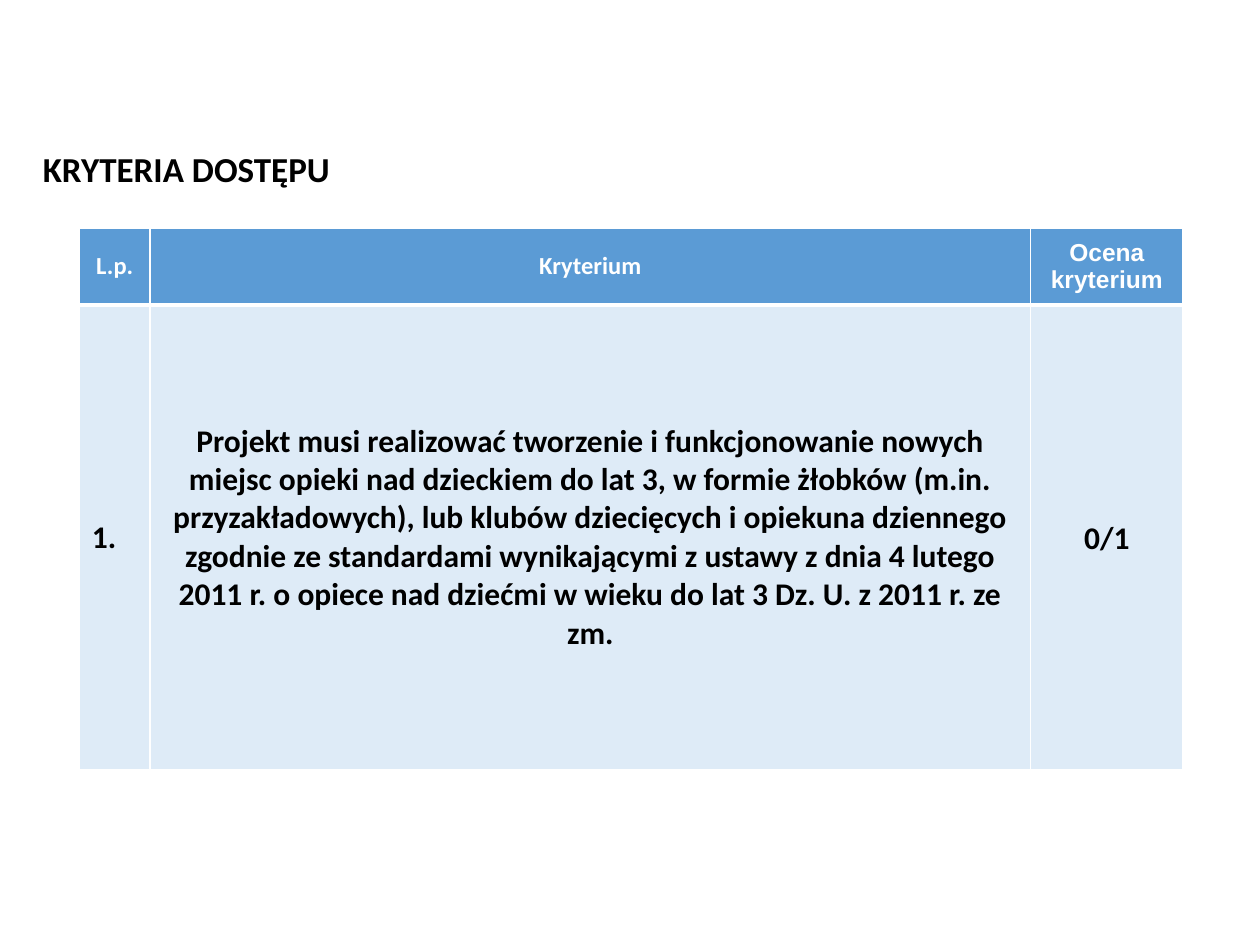
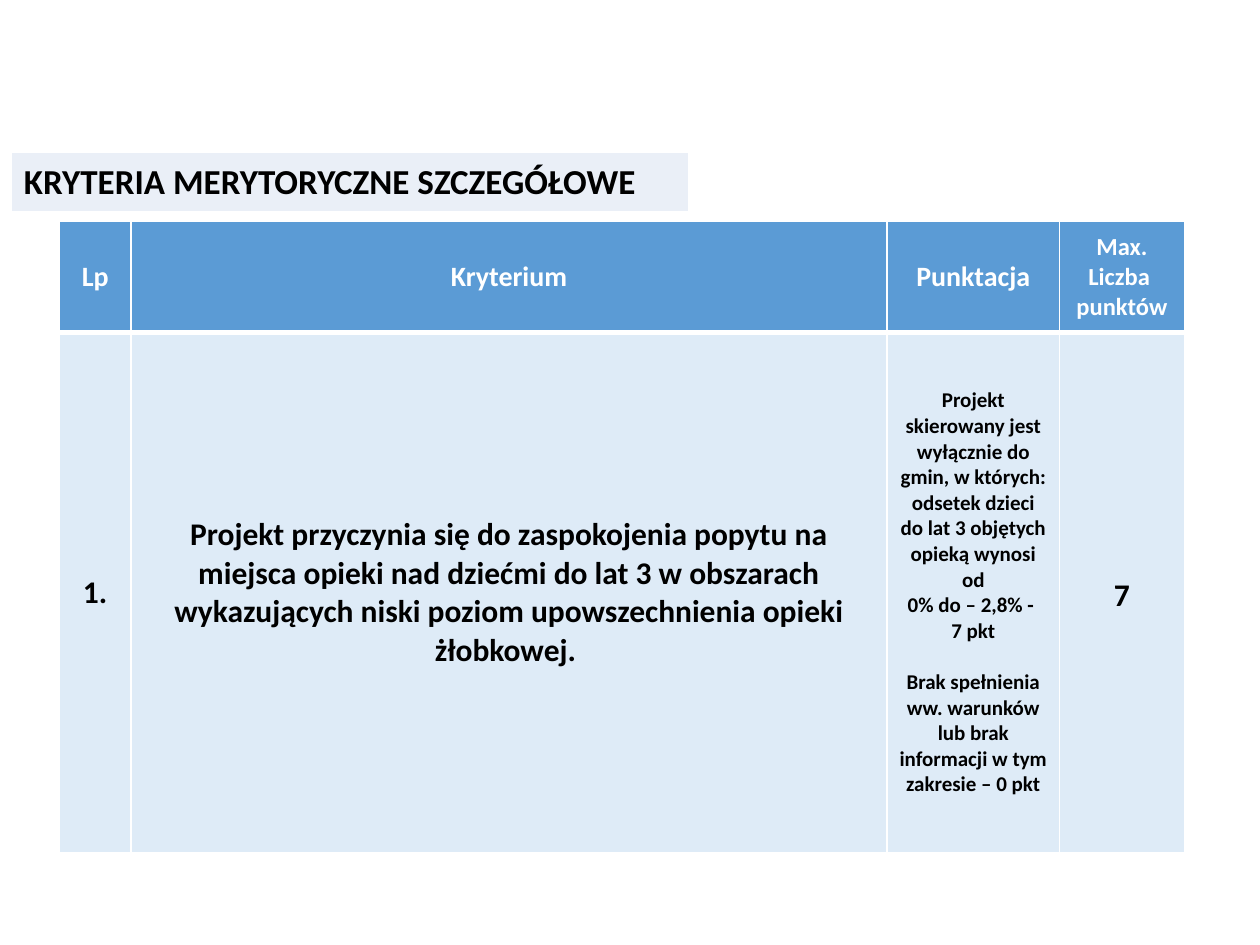
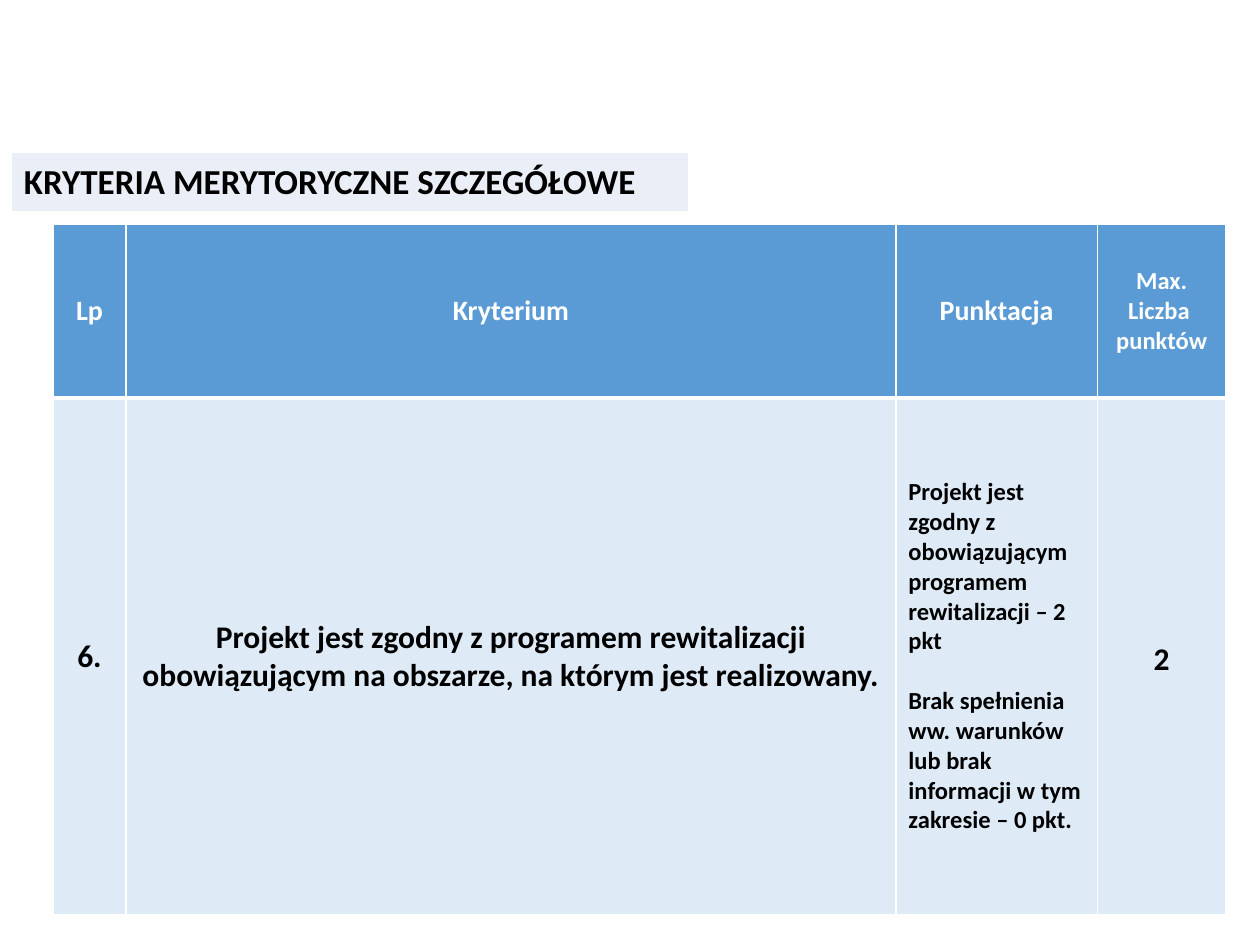
from dataclasses import dataclass
from typing import Optional

from lxml import etree
from pptx import Presentation
from pptx import util as u
from pptx.dml.color import RGBColor
from pptx.enum import text
from pptx.oxml.ns import qn

WIDTH, HEIGHT = 10, 7.5
FONT = "Calibri"
WHITE, BLACK = "FFFFFF", "000000"
HEADER_BLUE, ROW_BLUE, TITLE_TINT = "5B9BD5", "DEEBF7", "EAEFF7"
# Text colour, background and bottom border width of each kind of row
HEADER_LOOK = (WHITE, HEADER_BLUE, 3)
CRITERION_LOOK = (BLACK, ROW_BLUE, 1)
BANNER_LOOK = (BLACK, TITLE_TINT, 1)
LEFT, CENTER = text.PP_ALIGN.LEFT, text.PP_ALIGN.CENTER
TITLE_ONLY, BLANK = 5, 6
TITLE_SIZE = 20


@dataclass
class Entry:
    """Content of one table cell; gaps lists paragraphs set one line apart."""
    paragraphs: list
    size: int = 18
    align: int = CENTER
    font: str = FONT
    side_inset: float = 0.1
    end_inset: float = 0
    line_spacing: Optional[float] = None
    space_after: float = 0
    gaps: tuple = ()


def rgb(hex_string):
    return RGBColor.from_string(hex_string)


def style(paragraph, size, color, align, font=FONT):
    paragraph.alignment = align
    paragraph.font.size = u.Pt(size)
    paragraph.font.name = font
    paragraph.font.bold = True
    paragraph.font.color.rgb = rgb(color)


def add_title(slide, words, left, top, width, height):
    title = slide.shapes.title
    title.left, title.top, title.width, title.height = map(
        u.Inches, (left, top, width, height))
    frame = title.text_frame
    frame.text = words
    frame.word_wrap = True
    frame.auto_size = text.MSO_AUTO_SIZE.NONE
    frame.vertical_anchor = text.MSO_ANCHOR.MIDDLE
    style(frame.paragraphs[0], TITLE_SIZE, BLACK, LEFT)


def border(cell, bottom_points):
    properties = cell._tc.get_or_add_tcPr()
    for side, points in (("L", 1), ("R", 1), ("T", 1), ("B", bottom_points)):
        line = etree.SubElement(properties, qn(f"a:ln{side}"), w=str(u.Pt(points)))
        fill = etree.SubElement(line, qn("a:solidFill"))
        etree.SubElement(fill, qn("a:srgbClr"), val=WHITE)


def fill_cell(cell, entry, color, background, bottom_points):
    border(cell, bottom_points)
    cell.fill.solid()
    cell.fill.fore_color.rgb = rgb(background)
    cell.vertical_anchor = text.MSO_ANCHOR.MIDDLE
    cell.margin_left = cell.margin_right = u.Inches(entry.side_inset)
    cell.margin_top = cell.margin_bottom = u.Inches(entry.end_inset)
    frame = cell.text_frame
    for index, words in enumerate(entry.paragraphs):
        paragraph = frame.add_paragraph() if index else frame.paragraphs[0]
        paragraph.text = words
        paragraph.line_spacing = entry.line_spacing
        paragraph.space_after = u.Pt(entry.space_after)
        if index in entry.gaps:
            paragraph.space_before = u.Pt(entry.size * 1.22)
        style(paragraph, entry.size, color, entry.align, entry.font)


def add_table(slide, left, top, columns, rows, content):
    """Draw a table from content, a list of (entries, look) for each row."""
    table = slide.shapes.add_table(
        len(rows), len(columns), u.Inches(left), u.Inches(top),
        u.Inches(sum(columns)), u.Inches(sum(rows))).table
    for column, width in zip(table.columns, columns):
        column.width = u.Inches(width)
    for row, height in zip(table.rows, rows):
        row.height = u.Inches(height)
    for row, (entries, look) in enumerate(content):
        for column, entry in enumerate(entries):
            fill_cell(table.cell(row, column), entry, *look)


def heading(*paragraphs, size=16, font=FONT):
    return Entry(list(paragraphs), size, font=font, end_inset=0.05)


def access_slide(deck):
    slide = deck.slides.add_slide(deck.slide_layouts[TITLE_ONLY])
    headings = [heading("L.p.", size=14), heading("Kryterium", size=14),
                heading("Ocena kryterium", size=14, font="Arial")]
    criterion = [
        Entry(["1."], align=LEFT, end_inset=0.05),
        Entry(["Projekt musi realizować tworzenie i funkcjonowanie nowych miejsc "
               "opieki nad dzieckiem do lat 3, w formie żłobków (m.in. "
               "przyzakładowych), lub klubów dziecięcych i opiekuna dziennego "
               "zgodnie ze standardami wynikającymi z ustawy z dnia 4 lutego "
               "2011 r. o opiece nad dziećmi w wieku do lat 3 Dz. U. z 2011 r. "
               "ze zm."], space_after=6),
        Entry(["0/1"], side_inset=0.04, end_inset=0.04, line_spacing=1.07)]
    add_table(slide, 0.63, 1.81, (0.56, 6.99, 1.21), (0.61, 3.69),
              [(headings, HEADER_LOOK), (criterion, CRITERION_LOOK)])
    add_title(slide, "KRYTERIA DOSTĘPU", 0.24, 1.12, 3.7, 0.44)


def scoring_slide(deck, left, top, columns, rows, number, criterion, scoring, maximum):
    slide = deck.slides.add_slide(deck.slide_layouts[BLANK])
    headings = [heading("Lp"), heading("Kryterium"), heading("Punktacja"),
                heading("Max.", "Liczba  punktów", size=14)]
    entries = [Entry([number], end_inset=0.05), Entry([criterion], side_inset=0.07),
               scoring, Entry([maximum], line_spacing=1.15)]
    add_table(slide, left, top, columns, rows,
              [(headings, HEADER_LOOK), (entries, CRITERION_LOOK)])
    banner = Entry(["KRYTERIA MERYTORYCZNE SZCZEGÓŁOWE"], TITLE_SIZE, LEFT)
    add_table(slide, 0.09, 1.21, (5.38,), (0.47,), [([banner], BANNER_LOOK)])


def main():
    deck = Presentation()
    deck.slide_width, deck.slide_height = u.Inches(WIDTH), u.Inches(HEIGHT)
    access_slide(deck)
    scoring_slide(
        deck, 0.47, 1.76, (0.57, 6, 1.37, 0.99), (0.88, 4.13), "1.",
        "Projekt przyczynia się do zaspokojenia popytu na miejsca opieki nad "
        "dziećmi do lat 3 w obszarach wykazujących niski poziom "
        "upowszechnienia opieki żłobkowej. ",
        Entry(["Projekt skierowany jest wyłącznie do gmin, w których:",
               "odsetek dzieci do lat 3 objętych opieką wynosi od\n"
               "0% do – 2,8% - \n7 pkt",
               "Brak spełnienia ww. warunków lub brak informacji w tym "
               "zakresie – 0 pkt"], size=12, side_inset=0.09, gaps=(2,)),
        "7")
    scoring_slide(
        deck, 0.42, 1.78, (0.58, 6.11, 1.6, 1.02), (1.38, 4.1), "6.",
        "Projekt jest zgodny z programem rewitalizacji obowiązującym na "
        "obszarze, na którym jest realizowany.",
        Entry(["Projekt jest zgodny z obowiązującym programem rewitalizacji – 2 pkt",
               "Brak spełnienia ww. warunków lub brak informacji w tym "
               "zakresie – 0 pkt."], size=14, align=LEFT, gaps=(1,)),
        "2")
    deck.save("out.pptx")


if __name__ == "__main__":
    main()
